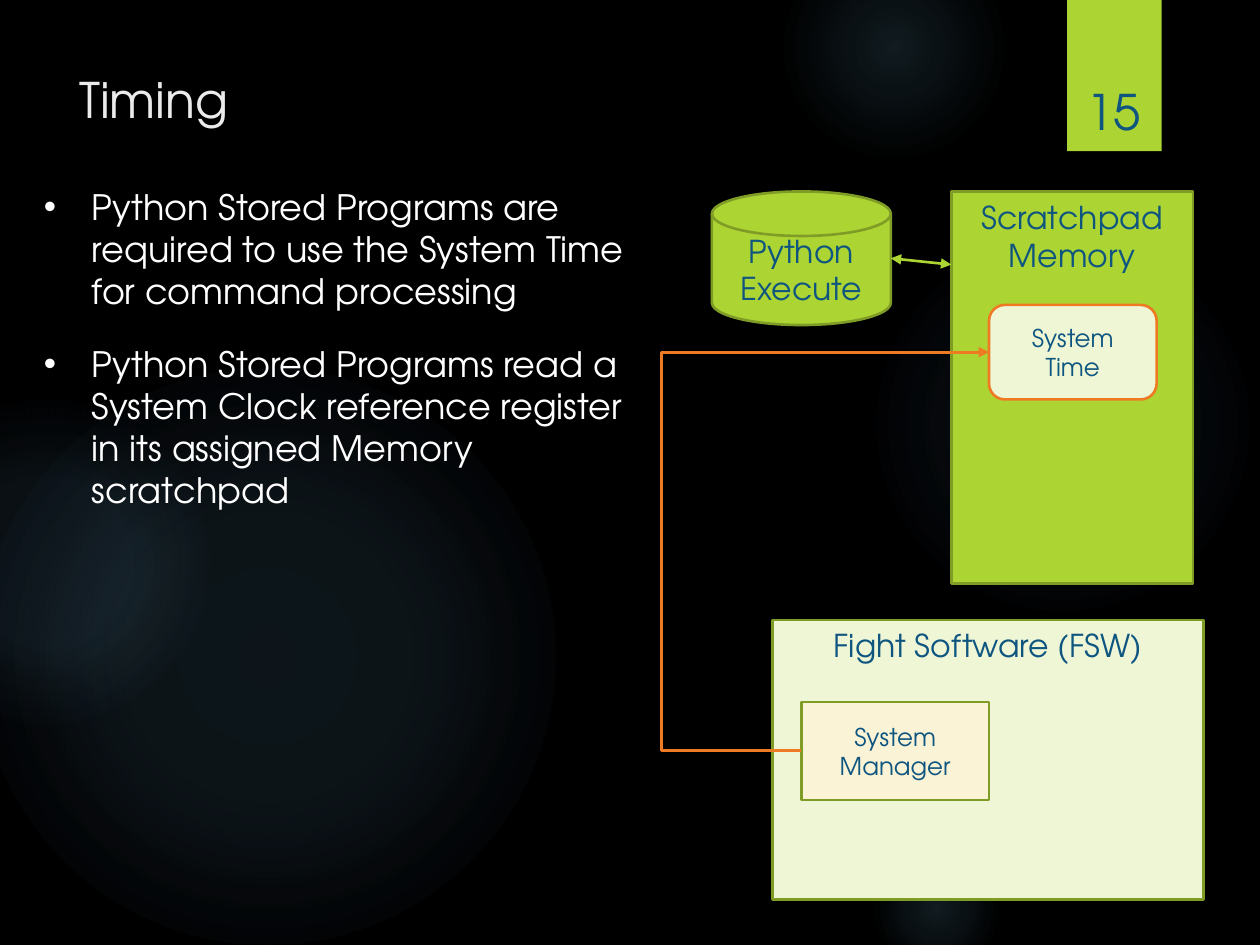
"""Build the Timing slide: two bullets beside a diagram of the system time flow."""
from lxml import etree
from pptx import Presentation, util as u
from pptx.dml import color
from pptx.enum import shapes, text
from pptx.oxml import ns

WIDTH, HEIGHT = u.Inches(10), u.Inches(7.5)
COLUMNS, ROWS = 100, 75
FONT = "TeX Gyre Adventor"
COLORS = {
    "night": "000000", "glow": "7AC4F0", "title": "EBEBEB", "white": "FFFFFF",
    "ink": "0E5580", "lime": "ACD433", "olive": "7F9D26", "pale": "EEF6D6",
    "cream": "FAF3D6", "orange": "EF7A24",
}
KIND = shapes.MSO_SHAPE
TOP, MIDDLE, BOTTOM = text.MSO_ANCHOR.TOP, text.MSO_ANCHOR.MIDDLE, text.MSO_ANCHOR.BOTTOM
LEFT, CENTER = text.PP_ALIGN.LEFT, text.PP_ALIGN.CENTER

# left, top, diameter, then (position, opacity) stops in percent
GLOWS = [
    (68.9, 18.3, 30.8, [(0, 7), (36, 6), (69, 0)]),
    (62.2, -5, 17.5, [(0, 14), (36, 7), (73, 0)]),
    (68.9, 66.7, 10.8, [(0, 14), (36, 7), (66, 0)]),
    (-1.7, 29.2, 45.8, [(0, 11), (36, 10), (75, 0)]),
    (-9.2, 31.7, 25.8, [(0, 8), (36, 8), (72, 0)]),
]
PAGE_TAB = (84.7, 0, 7.5, 12)
TITLE = ("Timing", (5.3, 5, 77.2, 15.3))
NUMBER = ("15", (84.9, 3.2, 6.9, 8.4))
BULLETS_AT = (2.5, 14.2, 49.2, 57.2)
BULLETS = [
    "Python Stored Programs are required to use the System Time for command processing",
    "Python Stored Programs read a System Clock reference register in its assigned Memory scratchpad",
]
EXECUTE = (56.5, 15.2, 14.2, 10.6)
SCRATCHPAD = (75.5, 15.2, 19.2, 31.1)
FLIGHT = (61.3, 49.2, 34.2, 22.2)
MANAGER = (63.6, 55.7, 14.9, 7.8)
CLOCK = (78.5, 24.2, 13.3, 7.5)
BOXES = [
    (KIND.FLOWCHART_MAGNETIC_DISK, EXECUTE, "lime", "olive", ["Python", "Execute"], 18, MIDDLE),
    (KIND.RECTANGLE, SCRATCHPAD, "lime", "olive", ["Scratchpad", "Memory"], 18, TOP),
    (KIND.RECTANGLE, FLIGHT, "pale", "olive", ["Fight Software (FSW)"], 18, TOP),
    (KIND.RECTANGLE, MANAGER, "cream", "olive", ["System", "Manager"], 14, MIDDLE),
    (KIND.ROUNDED_RECTANGLE, CLOCK, "pale", "orange", ["System", "Time"], 14, MIDDLE),
]
DETOUR_COLUMN = 52.5


def rgb(name):
    return color.RGBColor.from_string(COLORS[name])


def grid(*cells):
    """Turn alternating column and row counts into slide lengths."""
    units = (WIDTH / COLUMNS, HEIGHT / ROWS)
    return [round(cell * units[i % 2]) for i, cell in enumerate(cells)]


def child(parent, tag, **attributes):
    return etree.SubElement(parent, ns.qn(tag), {k: str(v) for k, v in attributes.items()})


def write(frame, lines, size, ink, align=LEFT, anchor=TOP):
    frame.word_wrap = True
    frame.vertical_anchor = anchor
    for i, line in enumerate(lines):
        para = frame.paragraphs[0] if i == 0 else frame.add_paragraph()
        para.alignment = align
        span = para.add_run()
        span.text = line
        span.font.name, span.font.size = FONT, u.Pt(size)
        span.font.color.rgb = rgb(ink)


def add_box(page, kind, at, fill, line=None):
    box = page.shapes.add_shape(kind, *grid(*at))
    box.shadow.inherit = False
    box.fill.solid()
    box.fill.fore_color.rgb = rgb(fill)
    if line:
        box.line.color.rgb = rgb(line)
        box.line.width = u.Pt(1.5)
    else:
        box.line.fill.background()
    return box


def add_glow(page, left, top, size, stops):
    box = add_box(page, KIND.OVAL, (left, top, size, size), "glow")
    solid = box.element.spPr.find(ns.qn("a:solidFill"))
    gradient = etree.Element(ns.qn("a:gradFill"), rotWithShape="1")
    stop_list = child(gradient, "a:gsLst")
    for position, opacity in stops:
        stop = child(stop_list, "a:gs", pos=position * 1000)
        tint = child(stop, "a:srgbClr", val=COLORS["glow"])
        child(tint, "a:alpha", val=opacity * 1000)
    circle = child(gradient, "a:path", path="circle")
    child(circle, "a:fillToRect", l=50000, t=50000, r=50000, b=50000)
    box.element.spPr.replace(solid, gradient)


def add_arrow(page, kind, ends, ink, width, heads):
    arrow = page.shapes.add_connector(kind, *grid(*ends))
    arrow.line.color.rgb = rgb(ink)
    arrow.line.width = u.Pt(width)
    line = arrow.line._get_or_add_ln()
    for head in heads:
        child(line, head, type="triangle")
    child(arrow.element.spPr, "a:effectLst")
    return arrow


def add_bullets(page):
    frame = page.shapes.add_textbox(*grid(*BULLETS_AT)).text_frame
    write(frame, BULLETS, 20, "white")
    indent = u.Inches(0.38)
    for i, para in enumerate(frame.paragraphs):
        para.space_before = u.Pt(18 if i else 0)
        props = para._p.get_or_add_pPr()
        props.set("marL", str(indent))
        props.set("indent", str(-indent))
        child(props, "a:buFont", typeface="Arial")
        child(props, "a:buChar", char="•")


def main():
    deck = Presentation()
    deck.slide_width, deck.slide_height = WIDTH, HEIGHT
    page = deck.slides.add_slide(deck.slide_layouts[6])
    page.background.fill.solid()
    page.background.fill.fore_color.rgb = rgb("night")

    for glow in GLOWS:
        add_glow(page, *glow)
    add_box(page, KIND.RECTANGLE, PAGE_TAB, "lime")
    for (label, at), ink, align, anchor in (
        (TITLE, "title", LEFT, TOP), (NUMBER, "ink", CENTER, BOTTOM),
    ):
        write(page.shapes.add_textbox(*grid(*at)).text_frame, [label], 28, ink, align, anchor)
    add_bullets(page)

    for kind, at, fill, line, lines, size, anchor in BOXES:
        box = add_box(page, kind, at, fill, line)
        write(box.text_frame, lines, size, "ink", CENTER, anchor)

    left, top, width, height = EXECUTE
    link = (left + width, top + height / 2, SCRATCHPAD[0], 21)
    add_arrow(page, shapes.MSO_CONNECTOR.STRAIGHT, link, "lime", 1.5, ["a:headEnd", "a:tailEnd"])

    start, end = MANAGER[0], CLOCK[0]
    route = (start, MANAGER[1] + MANAGER[3] / 2, end, CLOCK[1] + CLOCK[3] / 2)
    feed = add_arrow(page, shapes.MSO_CONNECTOR.ELBOW, route, "orange", 1.75, ["a:tailEnd"])
    bend = round((DETOUR_COLUMN - start) / (end - start) * 100000)
    guides = feed.element.spPr.find(ns.qn("a:prstGeom")).get_or_add_avLst()
    child(guides, "a:gd", name="adj1", fmla=f"val {bend}")

    deck.save("out.pptx")


if __name__ == "__main__":
    main()
